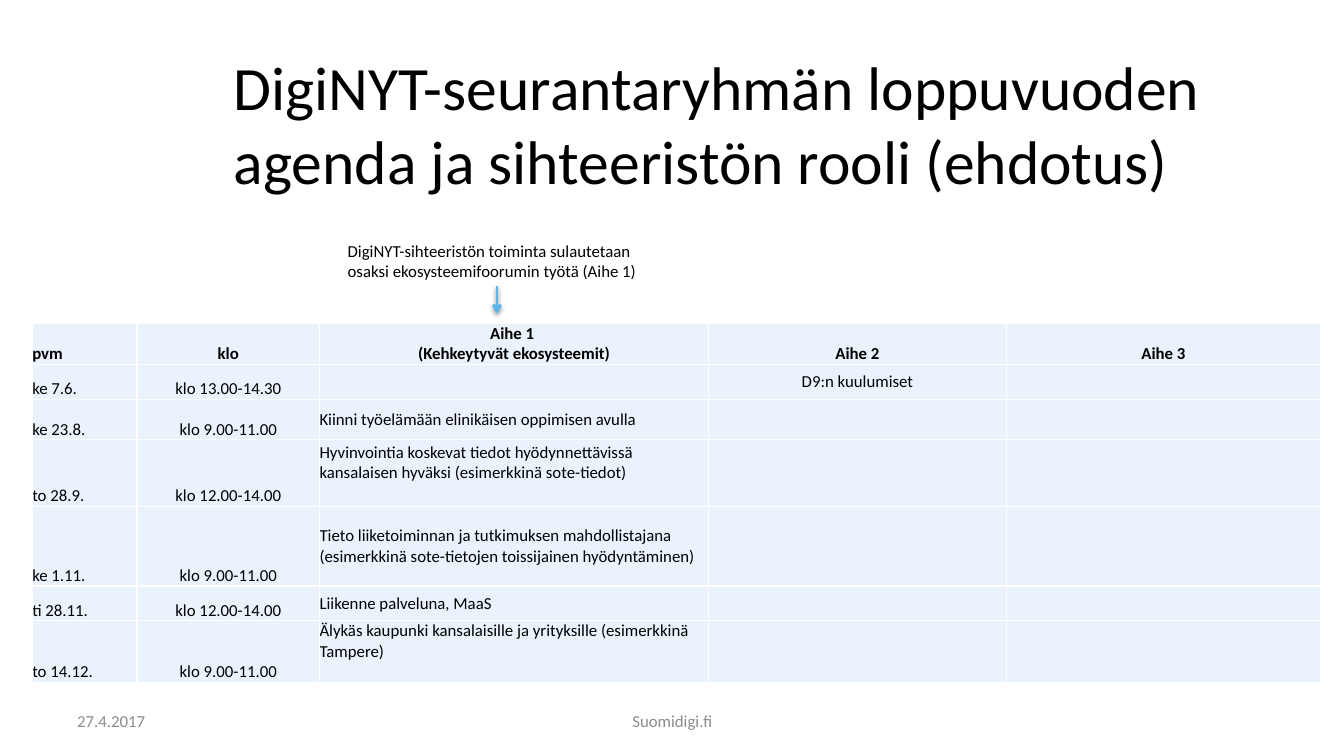
"""Build the agenda slide of the DigiNYT follow-up group."""
from dataclasses import dataclass

from lxml.etree import SubElement
from pptx import Presentation
from pptx.dml.color import RGBColor
from pptx.enum.shapes import MSO_CONNECTOR as Connector
from pptx.enum.text import MSO_ANCHOR as Anchor, PP_ALIGN as Align
from pptx.oxml import parse_xml
from pptx.oxml.ns import nsdecls, qn
from pptx.util import Inches, Pt

SLIDE_WIDTH, SLIDE_HEIGHT = Inches(13.33), Inches(7.5)
FONT, BLACK, GRAY, WHITE = "Calibri", "000000", "8C8C8C", "FFFFFF"
CELL_FILL, ARROW_BLUE = "EAF3FB", "5AB5EC"
TABLE_LEFT, TABLE_TOP = 2.4, 42.75
COLUMN_SHARES = (7.8, 13.58, 28.96, 22.13, 23.4)
HEADER_SHARE = 5.43
HEADERS = ("pvm", "klo", "Aihe 1 \n(Kehkeytyvät ekosysteemit)", "Aihe 2", "Aihe 3")
COLUMN_ALIGNS = (Align.LEFT, Align.CENTER, Align.LEFT, Align.CENTER, Align.CENTER)


@dataclass
class Meeting:
    """One agenda row; shares are percentages of the slide height."""
    date: str
    time: str
    topic: str
    second_topic: str
    height: float
    topic_lift: float = 0


@dataclass
class Label:
    """A text box placed in percentages of the slide size."""
    text: str
    left: float
    top: float
    width: float
    height: float
    color: str = GRAY
    align: Align = Align.LEFT
    anchor: Anchor = Anchor.MIDDLE


MEETINGS = (
    Meeting("ke 7.6.", "klo 13.00-14.30", "", "D9:n kuulumiset", 4.67),
    Meeting("ke 23.8.", "klo 9.00-11.00",
            "Kiinni työelämään elinikäisen oppimisen avulla", "", 5.33),
    Meeting("to 28.9.", "klo 12.00-14.00",
            "Hyvinvointia koskevat tiedot hyödynnettävissä kansalaisen hyväksi "
            "(esimerkkinä sote-tiedot)", "", 8.8, 2.7),
    Meeting("ke 1.11.", "klo 9.00-11.00",
            "Tieto liiketoiminnan ja tutkimuksen mahdollistajana "
            "(esimerkkinä sote-tietojen toissijainen hyödyntäminen)", "", 10.55),
    Meeting("ti 28.11.", "klo 12.00-14.00", "Liikenne palveluna, MaaS", "", 4.6),
    Meeting("to 14.12.", "klo 9.00-11.00",
            "Älykäs kaupunki kansalaisille ja yrityksille (esimerkkinä Tampere)",
            "", 8.15, 2.7),
)
LABELS = (
    Label("27.4.2017", 5, 92.67, 23.33, 5.33),
    Label("Suomidigi.fi", 34.2, 92.67, 31.65, 5.33, align=Align.CENTER),
    Label("DigiNYT-sihteeristön toiminta sulautetaan osaksi ekosysteemifoorumin "
          "työtä (Aihe 1)", 25.13, 31.2, 23.7, 6.67, BLACK, anchor=Anchor.TOP),
)


def rgb(value: str) -> RGBColor:
    """Turn a hex string into a colour."""
    return RGBColor.from_string(value)


def across(share: float) -> int:
    """Convert a percentage of the slide width."""
    return round(SLIDE_WIDTH * share / 100)


def down(share: float) -> int:
    """Convert a percentage of the slide height."""
    return round(SLIDE_HEIGHT * share / 100)


def format_text(text_frame, size: float, color: str, align: Align, bold: bool = False) -> None:
    """Format every paragraph and run of a text frame."""
    for paragraph in text_frame.paragraphs:
        paragraph.alignment = align
        for run in paragraph.runs:
            run.font.name, run.font.size, run.font.bold = FONT, Pt(size), bold
            run.font.color.rgb = rgb(color)


def add_title(slide) -> None:
    """Place and format the title placeholder."""
    title = slide.shapes.title
    title.left, title.top = across(16.65), down(5.47)
    title.width, title.height = across(78.32), down(21.47)
    text_frame = title.text_frame
    text_frame.text = "DigiNYT-seurantaryhmän loppuvuoden agenda ja sihteeristön rooli (ehdotus)"
    text_frame.word_wrap = True
    text_frame.vertical_anchor = Anchor.MIDDLE
    format_text(text_frame, 44, BLACK, Align.LEFT)


def add_label(slide, label: Label) -> None:
    """Draw one text box."""
    shape = slide.shapes.add_textbox(across(label.left), down(label.top),
                                     across(label.width), down(label.height))
    text_frame = shape.text_frame
    text_frame.word_wrap = True
    text_frame.vertical_anchor = label.anchor
    text_frame.text = label.text
    format_text(text_frame, 12, label.color, label.align)


def set_borders(cell) -> None:
    """Give a cell thin white borders on all sides."""
    properties = cell._tc.get_or_add_tcPr()
    for index, side in enumerate(("lnL", "lnR", "lnT", "lnB")):
        properties.insert(index, parse_xml(
            f'<a:{side} {nsdecls("a")} w="{Pt(1)}"><a:solidFill>'
            f'<a:srgbClr val="{WHITE}"/></a:solidFill></a:{side}>'))


def fill_cell(cell, text: str, align: Align, anchor: Anchor, bold: bool, lift: float) -> None:
    """Write and format one table cell."""
    cell.margin_left = cell.margin_right = cell.margin_top = 0
    cell.margin_bottom = down(lift)
    cell.vertical_anchor = anchor
    cell.fill.solid()
    cell.fill.fore_color.rgb = rgb(CELL_FILL)
    set_borders(cell)
    cell.text_frame.text = text
    format_text(cell.text_frame, 12, BLACK, align, bold)


def add_agenda(slide) -> None:
    """Draw the agenda table."""
    heights = (HEADER_SHARE, *(meeting.height for meeting in MEETINGS))
    table = slide.shapes.add_table(
        len(heights), len(COLUMN_SHARES), across(TABLE_LEFT), down(TABLE_TOP),
        across(sum(COLUMN_SHARES)), down(sum(heights))).table
    table.first_row = table.horz_banding = False
    for column, share in zip(table.columns, COLUMN_SHARES):
        column.width = across(share)
    for row, share in zip(table.rows, heights):
        row.height = down(share)
    for index, header in enumerate(HEADERS):
        align = Align.CENTER if index else Align.LEFT
        fill_cell(table.cell(0, index), header, align, Anchor.BOTTOM, True, 0)
    for row_index, meeting in enumerate(MEETINGS, 1):
        texts = (meeting.date, meeting.time, meeting.topic, meeting.second_topic, "")
        for index, (text, align) in enumerate(zip(texts, COLUMN_ALIGNS)):
            anchor = Anchor.BOTTOM if index < 2 else Anchor.MIDDLE
            lift = meeting.topic_lift if index == 2 else 0
            fill_cell(table.cell(row_index, index), text, align, anchor, False, lift)


def add_arrow(slide) -> None:
    """Draw the shadowed arrow from the note to the first topic."""
    arrow = slide.shapes.add_connector(Connector.STRAIGHT, across(36.98), down(37.87),
                                       across(36.98), down(41.47))
    arrow.line.color.rgb = rgb(ARROW_BLUE)
    arrow.line.width = Pt(2)
    SubElement(arrow.line._get_or_add_ln(), qn("a:tailEnd"), type="arrow")
    arrow._element.spPr.append(parse_xml(
        f'<a:effectLst {nsdecls("a")}><a:outerShdw blurRad="{Pt(3.1)}" dist="{Pt(1.6)}" '
        f'dir="5400000" rotWithShape="0"><a:srgbClr val="{BLACK}"><a:alpha val="38000"/>'
        '</a:srgbClr></a:outerShdw></a:effectLst>'))


def main() -> None:
    """Build and save the presentation."""
    presentation = Presentation()
    presentation.slide_width, presentation.slide_height = SLIDE_WIDTH, SLIDE_HEIGHT
    slide = presentation.slides.add_slide(presentation.slide_layouts[5])
    add_title(slide)
    add_agenda(slide)
    for label in LABELS:
        add_label(slide, label)
    add_arrow(slide)
    presentation.save("out.pptx")


if __name__ == "__main__":
    main()
